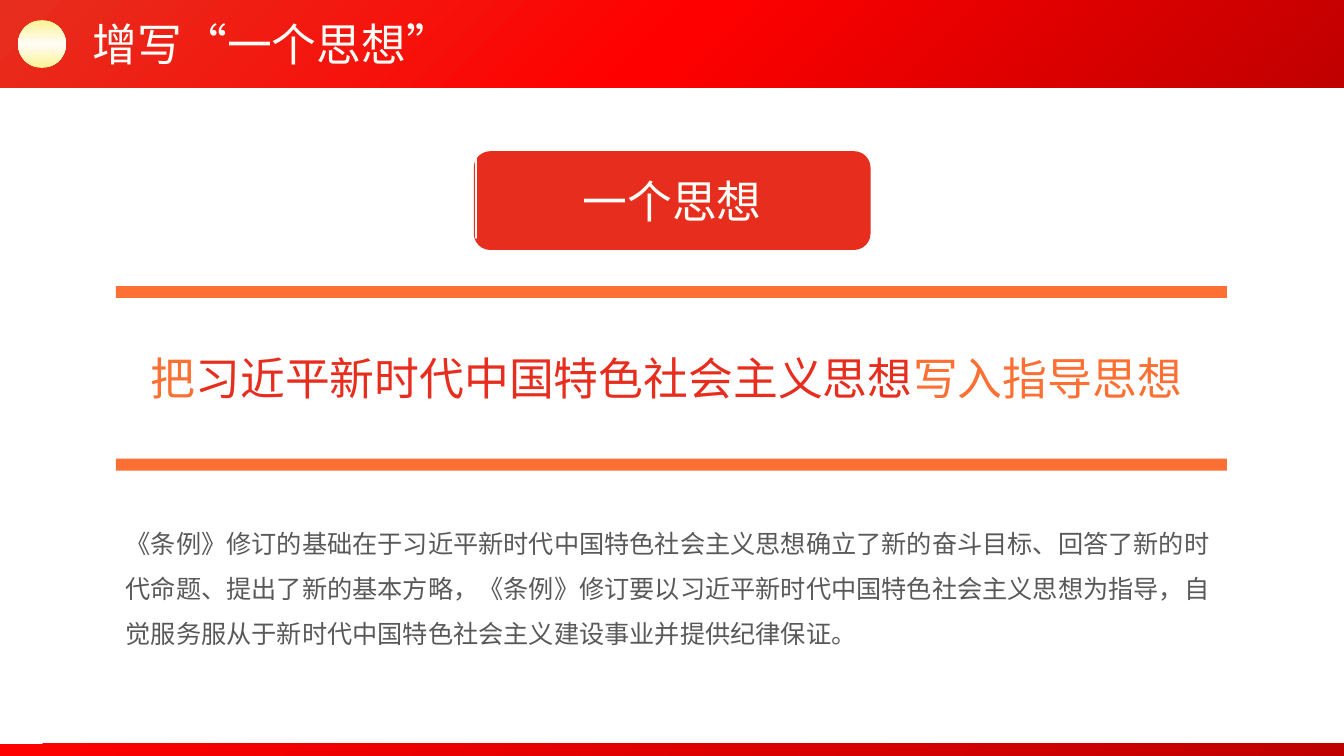
from copy import deepcopy

from lxml.etree import SubElement
from pptx import Presentation
from pptx.dml.color import RGBColor
from pptx.enum.lang import MSO_LANGUAGE_ID
from pptx.enum.shapes import MSO_SHAPE
from pptx.enum.text import MSO_ANCHOR, MSO_AUTO_SIZE, PP_ALIGN
from pptx.oxml.ns import qn
from pptx.util import Cm, Pt

FONT = "Noto Sans CJK SC"
COLORS = {
    "red": "E72E1E",
    "bright": "FF0000",
    "dark": "C00000",
    "orange": "FC7033",
    "peach": "FFA075",
    "gold": "FDF394",
    "cream": "FFFDF8",
    "grey": "595959",
}


def write_text(shape, text, color="cream", size=32, align=PP_ALIGN.LEFT,
               anchor=MSO_ANCHOR.TOP, wrap=True, spacing=1.0):
    frame = shape.text_frame
    frame.word_wrap = wrap
    frame.auto_size = MSO_AUTO_SIZE.NONE
    frame.vertical_anchor = anchor
    paragraph = frame.paragraphs[0]
    paragraph.alignment = align
    paragraph.line_spacing = spacing
    run = paragraph.add_run()
    run.text = text
    run.font.size = Pt(size)
    run.font.name = FONT
    run.font.language_id = MSO_LANGUAGE_ID.SIMPLIFIED_CHINESE
    run.font.color.rgb = RGBColor.from_string(COLORS[color])
    SubElement(run.font._element, qn("a:ea")).set("typeface", FONT)


def add_panel(kind, left, top, width, height, colors, angle=315):
    shape = slide.shapes.add_shape(kind, Cm(left), Cm(top), Cm(width), Cm(height))
    shape.shadow.inherit = False
    shape.line.fill.background()
    if len(colors) == 1:
        shape.fill.solid()
        shape.fill.fore_color.rgb = RGBColor.from_string(COLORS[colors[0]])
        return shape
    shape.fill.gradient()
    shape.fill.gradient_angle = angle
    stop_list = shape._element.spPr.find(".//" + qn("a:gsLst"))
    for _ in colors[2:]:
        stop_list.insert(1, deepcopy(stop_list[0]))
    for index, (stop, color) in enumerate(zip(shape.fill.gradient_stops, colors)):
        stop.position = index / (len(colors) - 1)
        stop.color.rgb = RGBColor.from_string(COLORS[color])
    return shape


presentation = Presentation()
presentation.slide_width = Cm(33.87)
presentation.slide_height = Cm(19.05)
slide = presentation.slides.add_slide(presentation.slide_layouts[5])

add_panel(MSO_SHAPE.RECTANGLE, 0, 18.74, 33.87, 0.31, ["bright", "dark"])
add_panel(MSO_SHAPE.RECTANGLE, 0, 0, 33.87, 2.21, ["red", "bright", "dark"])
add_panel(MSO_SHAPE.OVAL, 0.46, 0.51, 1.2, 1.2, ["gold", "cream", "gold"], angle=270)

title = slide.shapes.title
title.left, title.top, title.width, title.height = Cm(2.08), Cm(0.3), Cm(9.63), Cm(1.63)
write_text(title, "增写“一个思想”", wrap=False)
slide.shapes._spTree.append(title._element)

headline = slide.shapes.add_textbox(Cm(2.92), Cm(8.71), Cm(27.75), Cm(1.63))
for text, color in [("把", "orange"),
                    ("习近平新时代中国特色社会主义思想", "red"),
                    ("写入指导思想", "orange")]:
    write_text(headline, text, color, align=PP_ALIGN.CENTER)

explanation = slide.shapes.add_textbox(Cm(2.92), Cm(12.8), Cm(28), Cm(3.61))
write_text(
    explanation,
    "《条例》修订的基础在于习近平新时代中国特色社会主义思想确立了新的奋斗目标、"
    "回答了新的时代命题、提出了新的基本方略，《条例》修订要以习近平新时代中国特色"
    "社会主义思想为指导，自觉服务服从于新时代中国特色社会主义建设事业并提供纪律保证。",
    "grey", size=18, spacing=1.5)

label = add_panel(MSO_SHAPE.ROUNDED_RECTANGLE, 11.94, 3.81, 10, 2.49, ["red"])
write_text(label, "一个思想", align=PP_ALIGN.CENTER, anchor=MSO_ANCHOR.MIDDLE)

for top in (7.21, 11.56):
    add_panel(MSO_SHAPE.RECTANGLE, 2.92, top, 28, 0.3, ["orange"])

numeral_points = [
    (12.04, 3.81), (12.12, 3.81), (12.12, 5.87), (12.13, 6.12), (12.19, 6.2),
    (12.42, 6.22), (12.42, 6.3), (11.51, 6.3), (11.51, 6.22), (11.71, 6.2),
    (11.79, 6.12), (11.81, 5.87), (11.81, 4.55), (11.79, 4.22), (11.73, 4.11),
    (11.66, 4.09), (11.48, 4.14), (11.46, 4.09),
]
builder = slide.shapes.build_freeform(*numeral_points[0], scale=Cm(1))
builder.add_line_segments(numeral_points[1:], close=True)
numeral = builder.convert_to_shape()
numeral.shadow.inherit = False
numeral.fill.solid()
numeral.fill.fore_color.rgb = RGBColor.from_string(COLORS["peach"])
numeral.line.color.rgb = RGBColor.from_string(COLORS["cream"])
numeral.line.width = Pt(1)

presentation.save("out.pptx")
